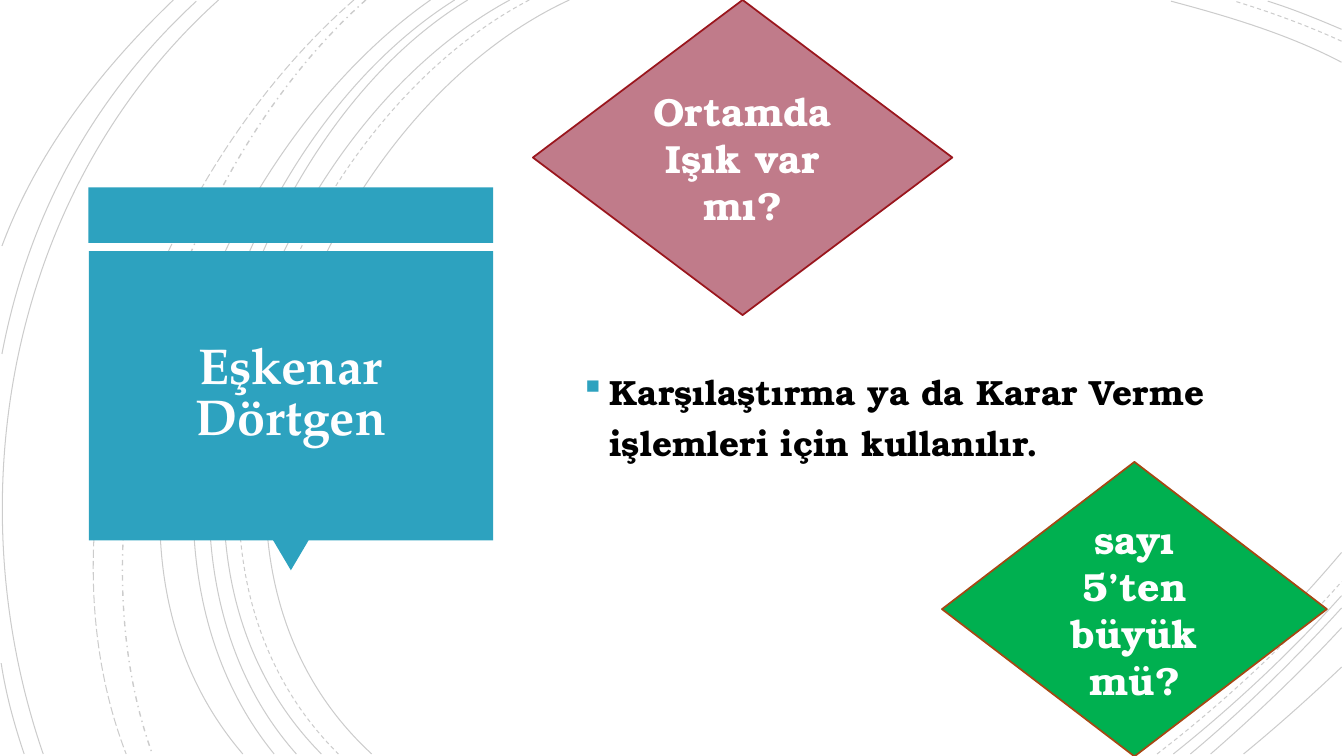
from lxml import etree
from pptx import Presentation
from pptx.dml.color import RGBColor
from pptx.enum.dml import MSO_LINE as Dash
from pptx.enum.shapes import MSO_SHAPE as Form
from pptx.enum.text import MSO_ANCHOR as Anchor, PP_ALIGN as Align
from pptx.oxml import parse_xml
from pptx.oxml.ns import nsdecls, qn
from pptx.util import Cm, Pt

BLUE, WHITE, BLACK = "2DA2BF", "FFFFFF", "000000"
SERIF, BOOK = "TeX Gyre Bonum", "TeX Gyre Pagella"
EDGE, FOOT = 33.81, 19  # where the arcs leave the slide

# Long arcs from top to bottom: start x, two control points, end x
SWEEPS = [
    (14.35, (8, 2.92), (3.63, 13.72), 9.37, None),
    (13.34, (7.24, 3.18), (3.12, 13.64), 8.53, Dash.DASH),
    (12.85, (6.86, 3.23), (2.79, 13.64), 8.1, None),
    (11.79, (6.2, 3.38), (2.79, 13.74), 7.47, None),
    (11.46, (5.87, 3.51), (2.46, 13.54), 6.91, None),
    (10.85, (5.51, 3.73), (1.35, 13.44), 6.12, None),
    (9.22, (4.47, 4.22), (1.65, 12.93), 3.84, Dash.DASH_DOT),
    (8.92, (3.99, 4.29), (0.74, 12.67), 3.18, Dash.LONG_DASH),
    (5.51, (0.28, 4.7), (-1.17, 12.45), 1.09, None),
]
# Top right arcs: y at the edge, two control points, x at the top
TOPS = [
    (1.57, (32.46, 0.86), (30.94, 0.41), 29.51, None),
    (1.04, (32.94, 0.64), (32, 0.3), 31.12, Dash.DASH),
    (0.74, (33.2, 0.48), (32.59, 0.23), 31.95, None),
]
# Bottom right arcs: x at the foot, two control points, y at the edge
LOWS = [
    (28.47, (30.4, 17.53), (32.23, 15.8), 13.92, None),
    (29.16, (30.81, 17.73), (32.39, 16.26), 14.66, Dash.DASH),
    (29.57, (31.06, 17.81), (32.51, 16.46), 15.01, None),
    (30, (31.34, 17.88), (32.61, 16.64), 15.32, None),
    (30.51, (31.65, 18.01), (32.77, 16.94), 15.82, None),
    (31.34, (32.18, 18.31), (33, 17.58), 16.81, None),
]
# Short arcs at the left edge: all four points
LEFTS = [
    ((4.95, 0.03), (2.34, 2.44), (0.71, 5.44), (0.05, 8.92)),
    ((0.03, 16.71), (0.15, 17.5), (0.36, 18.26), (0.61, 19)),
    ((4.37, 0), (2.54, 1.75), (0.94, 3.81), (0.05, 6.2)),
]


def color(code):
    return RGBColor.from_string(code)


def write(frame, text, size=28, font=SERIF, ink=WHITE, align=Align.CENTER,
          space=None, before=0, inset=(0.33, 0.18)):
    """Fill a text frame with one bold, vertically centred paragraph."""
    frame.word_wrap = True
    frame.vertical_anchor = Anchor.MIDDLE
    frame.margin_left = frame.margin_right = Cm(inset[0])
    frame.margin_top = frame.margin_bottom = Cm(inset[1])
    para = frame.paragraphs[0]
    para.alignment, para.space_before = align, Pt(before)
    if space:
        para.line_spacing = space
    run = para.add_run()
    run.text = text
    run.font.size, run.font.name, run.font.bold = Pt(size), font, True
    run.font.color.rgb = color(ink)
    return para


class Board:
    def __init__(self, slide):
        self.shapes = slide.shapes

    def arc(self, start, *rest, dash=None):
        """Draw a faint cubic curve through two control points."""
        pen = self.shapes.build_freeform(*map(Cm, start))
        pen.add_line_segments([tuple(map(Cm, dot)) for dot in rest], close=False)
        curve = pen.convert_to_shape()
        curve.shadow.inherit = False
        curve.fill.background()
        line = curve.line
        line.color.rgb = color(BLACK)
        line.width = Pt(1 if dash == Dash.DASH_DOT else 0.75)
        if dash:
            line.dash_style = dash
        props = curve._element.spPr
        tint = props.find(qn("a:ln")).find(".//" + qn("a:srgbClr"))
        etree.SubElement(tint, qn("a:alpha"), val="20000")
        # Turn the three straight segments into one curve
        track = props.find(".//" + qn("a:path"))
        bend = etree.SubElement(track, qn("a:cubicBezTo"))
        for leg in track.findall(qn("a:lnTo")):
            bend.append(leg[0])
            track.remove(leg)

    def block(self, form, box, fill, edge=None):
        shape = self.shapes.add_shape(form, *map(Cm, box))
        shape.shadow.inherit = False
        shape.fill.solid()
        shape.fill.fore_color.rgb = color(fill)
        if edge:
            shape.line.color.rgb = color(edge)
            shape.line.width = Pt(1.25)
        else:
            shape.line.fill.background()
        return shape

    def label(self, box, text, **style):
        frame = self.shapes.add_textbox(*map(Cm, box)).text_frame
        return write(frame, text, **style)

    def bullet(self, box, text, **style):
        props = self.label(box, text, **style)._p.get_or_add_pPr()
        props.set("marL", str(Cm(0.64)))
        props.set("indent", str(Cm(-0.64)))
        ns = nsdecls("a")
        for xml in (f'<a:buClr {ns}><a:srgbClr val="{BLUE}"/></a:buClr>',
                    f'<a:buSzPct {ns} val="110000"/>',
                    f'<a:buFont {ns} typeface="Wingdings" pitchFamily="2" charset="2"/>',
                    f'<a:buChar {ns} char="§"/>'):
            props.append(parse_xml(xml))


def main():
    deck = Presentation()
    deck.slide_width, deck.slide_height = Cm(33.87), Cm(19.05)
    board = Board(deck.slides.add_slide(deck.slide_layouts[6]))

    # Background arcs
    for x, one, two, end, dash in SWEEPS:
        board.arc((x, 0), one, two, (end, FOOT), dash=dash)
    for y, one, two, x, dash in TOPS:
        board.arc((EDGE, y), one, two, (x, 0.03), dash=dash)
    for x, one, two, y, dash in LOWS:
        board.arc((x, FOOT), one, two, (EDGE, y), dash=dash)
    for dots in LEFTS:
        board.arc(*dots)

    # Title panel
    board.block(Form.RECTANGLE, (2.23, 4.72, 10.2, 1.4), BLUE)
    board.block(Form.ISOSCELES_TRIANGLE, (6.88, 13.61, 0.9, 0.76), BLUE).rotation = 180
    board.block(Form.RECTANGLE, (2.24, 6.33, 10.19, 7.29), BLUE)
    board.label((2.46, 6.53, 9.73, 6.83), "Eşkenar Dörtgen", size=36, font=BOOK,
                ink="FFFEFF", space=0.85, inset=(0.64, 0.64))

    # Explanation
    board.bullet((14.47, 3.96, 17.22, 12.88),
                 "Karşılaştırma ya da Karar Verme işlemleri için kullanılır.",
                 size=25, ink=BLACK, align=Align.LEFT, space=1.2, before=10,
                 inset=(0.25, 0.13))

    # Decision diamonds
    for box, fill, edge, text in (
            ((23.74, 11.64, 9.7, 7.42), "00B050", "A64713", "sayı 5’ten büyük mü?"),
            ((13.43, 0, 10.57, 7.94), "C07B8A", "9A161D", "Ortamda Işık var mı?")):
        write(board.block(Form.DIAMOND, box, fill, edge).text_frame, text)

    deck.save("out.pptx")


if __name__ == "__main__":
    main()
